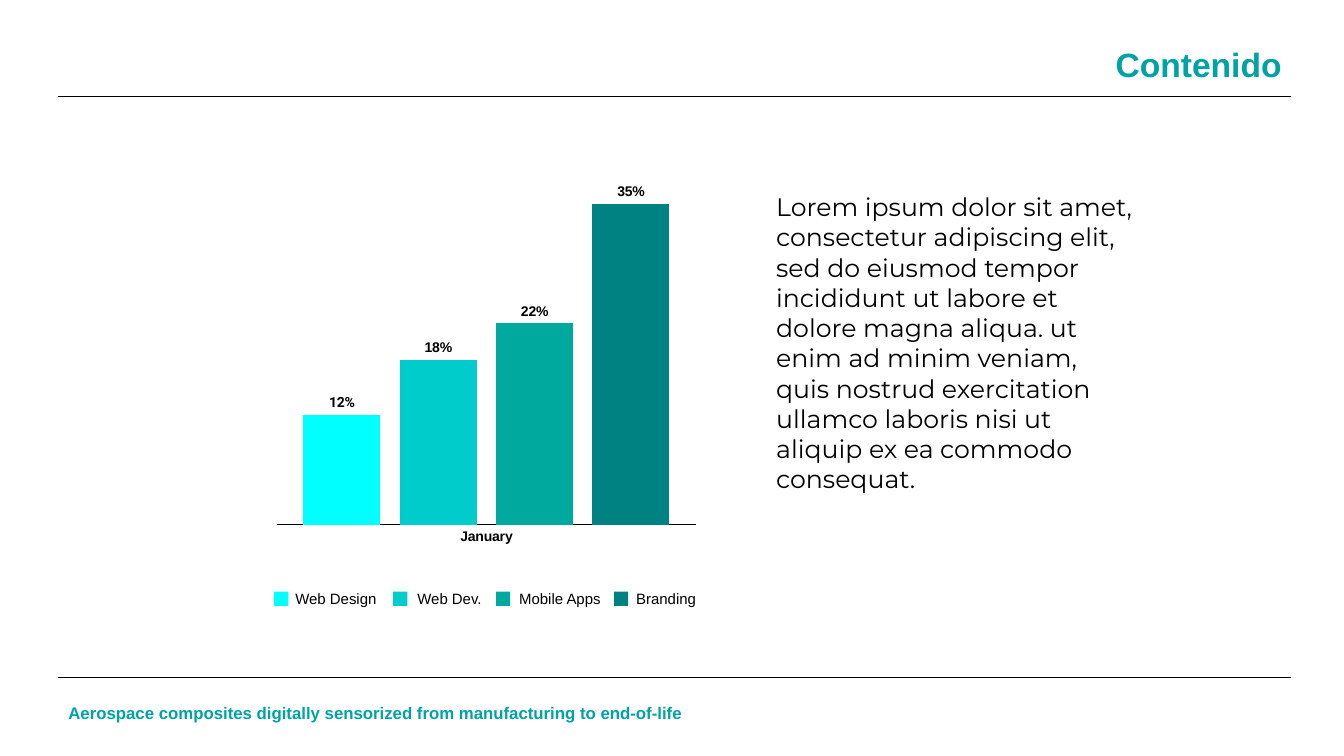
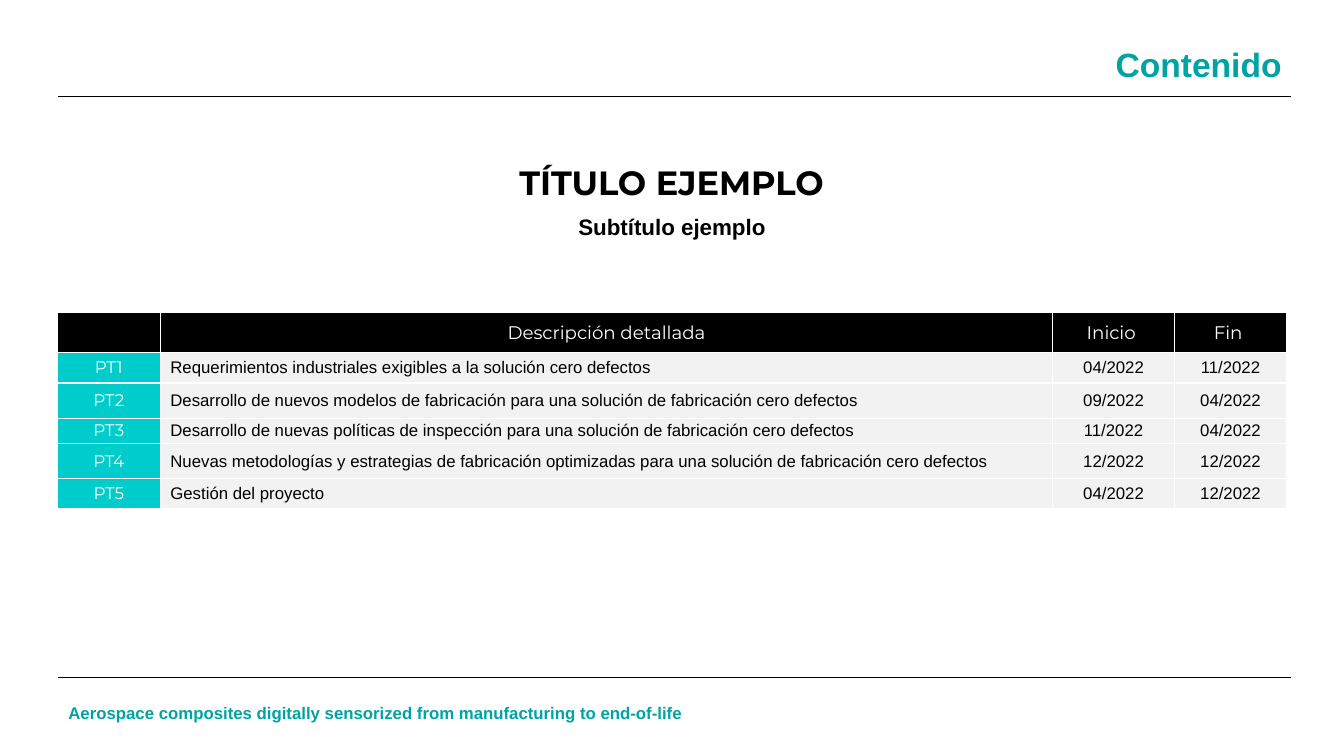
import lxml.etree
import pptx
import pptx.chart.data
import pptx.dml.color
import pptx.enum.chart
import pptx.enum.shapes
import pptx.enum.text
import pptx.oxml.ns
import pptx.util

Inches = pptx.util.Inches
Pt = pptx.util.Pt
ALIGN = pptx.enum.text.PP_ALIGN
ANCHOR = pptx.enum.text.MSO_ANCHOR


class Theme:
    ink = "000000"
    paper = "FFFFFF"
    accent = "00A3A3"
    stage = "00CCCC"
    row = "F2F2F2"
    chart_base = "FFC000"
    sans = "Arial"
    display = "Montserrat"
    chart_font = "Lato"
    label_font = "Roboto"
    heading_size = 24
    body_size = 18
    subtitle_size = 16
    header_size = 13
    small_size = 12
    legend_size = 10.7
    label_size = 10
    chart_size = 8
    rule_width = 0.5
    axis_width = 0.75
    border_width = 1


HEADING = "Contenido"
FOOTER = "Aerospace composites digitally sensorized from manufacturing to end-of-life"
RULE_LEFT, RULE_RIGHT = 0.58, 12.8
RULE_TOPS = (0.96, 6.72)

MONTH = "January"
SERVICES = [
    {"name": "Web Design", "share": 0.12, "color": "00FFFF", "font": Theme.label_font,
     "key_left": 2.72, "name_left": 2.93, "name_width": 0.97},
    {"name": "Web Dev.", "share": 0.18, "color": "00CCCC", "font": Theme.sans,
     "key_left": 3.9, "name_left": 4.14, "name_width": 0.97},
    {"name": "Mobile Apps", "share": 0.22, "color": "00A99D", "font": Theme.sans,
     "key_left": 4.92, "name_left": 5.15, "name_width": 0.97},
    {"name": "Branding", "share": 0.35, "color": "008282", "font": Theme.sans,
     "key_left": 6.09, "name_left": 6.31, "name_width": 0.72},
]
LEGEND_TOP, KEY_TOP, KEY_SIZE = 5.85, 5.87, 0.14
BODY = (
    "Lorem ipsum dolor sit amet, consectetur adipiscing elit, sed do eiusmod tempor "
    "incididunt ut labore et dolore magna aliqua. ut enim ad minim veniam, quis nostrud "
    "exercitation ullamco laboris nisi ut aliquip ex ea commodo consequat."
)

TITLE = "TÍTULO EJEMPLO"
SUBTITLE = "Subtítulo ejemplo"
PLAN = [
    ("", "Descripción detallada", "Inicio ", "Fin "),
    ("PT1", "Requerimientos industriales exigibles a la solución cero defectos",
     "04/2022", "11/2022"),
    ("PT2", "Desarrollo de nuevos modelos de fabricación para una solución de fabricación cero defectos",
     "09/2022", "04/2022"),
    ("PT3", "Desarrollo de nuevas políticas de inspección para una solución de fabricación cero defectos",
     "11/2022", "04/2022"),
    ("PT4", "Nuevas metodologías y estrategias de fabricación optimizadas para una solución de fabricación cero defectos",
     "12/2022", "12/2022"),
    ("PT5", "Gestión del proyecto", "04/2022", "12/2022"),
]
PLAN_WIDTHS = (1.02, 8.85, 1.21, 1.11)
PLAN_HEIGHTS = (0.4, 0.3, 0.35, 0.25, 0.35, 0.3)


def rgb(color):
    return pptx.dml.color.RGBColor.from_string(color)


def style_font(font, size, color, face, bold=False):
    font.size = Pt(size)
    font.color.rgb = rgb(color)
    font.name = face
    font.bold = bold


def write(frame, text, size, color, face, bold=False, align=ALIGN.LEFT):
    paragraph = frame.paragraphs[0]
    paragraph.alignment = align
    run = paragraph.add_run()
    run.text = text
    style_font(run.font, size, color, face, bold)


def add_text(shapes, box, text, size, color, face, bold=False, align=ALIGN.LEFT,
             wrap=True, flush=False):
    frame = shapes.add_textbox(*map(Inches, box)).text_frame
    frame.word_wrap = wrap
    frame.auto_size = pptx.enum.text.MSO_AUTO_SIZE.SHAPE_TO_FIT_TEXT
    if flush:
        frame.margin_left = frame.margin_right = frame.margin_top = frame.margin_bottom = 0
    write(frame, text, size, color, face, bold, align)


def add_content_slide(deck):
    slide = deck.slides.add_slide(deck.slide_layouts[6])
    add_text(slide.shapes, (RULE_LEFT, 6.92, 6.42, 0.3), FOOTER,
             Theme.small_size, Theme.accent, Theme.sans, bold=True)
    for top in RULE_TOPS:
        rule = slide.shapes.add_connector(
            pptx.enum.shapes.MSO_CONNECTOR.STRAIGHT,
            Inches(RULE_LEFT), Inches(top), Inches(RULE_RIGHT), Inches(top))
        rule.line.color.rgb = rgb(Theme.ink)
        rule.line.width = Pt(Theme.rule_width)
        lxml.etree.SubElement(rule._element.spPr, pptx.oxml.ns.qn("a:effectLst"))
    add_text(slide.shapes, (9.23, 0.39, 3.58, 0.5), HEADING,
             Theme.heading_size, Theme.accent, Theme.sans, bold=True, align=ALIGN.RIGHT)
    return slide


def add_share_chart(slide):
    shares = pptx.chart.data.CategoryChartData(number_format="0%")
    shares.categories = [MONTH]
    for service in SERVICES:
        shares.add_series(service["name"], [service["share"]])
    chart = slide.shapes.add_chart(
        pptx.enum.chart.XL_CHART_TYPE.COLUMN_CLUSTERED,
        Inches(2.66), Inches(1.49), Inches(4.33), Inches(3.99), shares).chart
    chart.has_legend = False
    chart.has_title = False
    style_font(chart.font, Theme.chart_size, Theme.chart_base, Theme.chart_font)

    months = chart.category_axis
    months.major_tick_mark = pptx.enum.chart.XL_TICK_MARK.NONE
    months.format.line.color.rgb = rgb(Theme.ink)
    months.format.line.width = Pt(Theme.axis_width)
    style_font(months.tick_labels.font, Theme.label_size, Theme.ink, Theme.sans, True)

    scale = chart.value_axis
    scale.minimum_scale, scale.maximum_scale = 0, 0.4
    scale.has_major_gridlines = False
    scale.visible = False

    columns = chart.plots[0]
    columns.vary_by_categories = False
    columns.gap_width = 69
    columns.overlap = -25
    for series, service in zip(columns.series, SERVICES):
        series.format.fill.solid()
        series.format.fill.fore_color.rgb = rgb(service["color"])
        labels = series.data_labels
        labels.show_value = True
        labels.number_format = "0%"
        labels.number_format_is_linked = False
        labels.position = pptx.enum.chart.XL_LABEL_POSITION.OUTSIDE_END
        style_font(labels.font, Theme.label_size, Theme.ink, service["font"], True)


def add_legend(slide):
    legend = slide.shapes.add_group_shape().shapes
    for service in SERVICES:
        add_text(legend, (service["name_left"], LEGEND_TOP, service["name_width"], 0.18),
                 service["name"], Theme.legend_size, Theme.ink, Theme.sans, flush=True)
        key = legend.add_shape(
            pptx.enum.shapes.MSO_SHAPE.RECTANGLE,
            Inches(service["key_left"]), Inches(KEY_TOP), Inches(KEY_SIZE), Inches(KEY_SIZE))
        key.shadow.inherit = False
        key.fill.solid()
        key.fill.fore_color.rgb = rgb(service["color"])
        key.line.fill.background()


def add_borders(cell):
    qn = pptx.oxml.ns.qn
    properties = cell._tc.get_or_add_tcPr()
    for side in ("lnL", "lnR", "lnT", "lnB"):
        border = lxml.etree.SubElement(properties, qn("a:" + side),
                                       w=str(int(Pt(Theme.border_width))))
        fill = lxml.etree.SubElement(border, qn("a:solidFill"))
        lxml.etree.SubElement(fill, qn("a:srgbClr"), val=Theme.paper)


def plan_style(row, column):
    if row == 0:
        return Theme.ink, Theme.header_size, Theme.paper, Theme.display, ALIGN.CENTER
    if column == 0:
        return Theme.stage, Theme.small_size, Theme.paper, Theme.display, ALIGN.CENTER
    align = ALIGN.JUSTIFY if column == 1 else ALIGN.CENTER
    return Theme.row, Theme.small_size, Theme.ink, Theme.sans, align


def add_plan(slide):
    plan = slide.shapes.add_table(
        len(PLAN), len(PLAN_WIDTHS), Inches(0.57), Inches(3.1),
        Inches(sum(PLAN_WIDTHS)), Inches(sum(PLAN_HEIGHTS))).table
    plan.first_row = False
    plan.horz_banding = False
    for column, width in zip(plan.columns, PLAN_WIDTHS):
        column.width = Inches(width)
    for row, height in zip(plan.rows, PLAN_HEIGHTS):
        row.height = Inches(height)
    for r, entries in enumerate(PLAN):
        for c, entry in enumerate(entries):
            fill, size, color, face, align = plan_style(r, c)
            cell = plan.cell(r, c)
            cell.margin_left = cell.margin_right = Inches(0.1)
            cell.margin_top = cell.margin_bottom = 0
            cell.vertical_anchor = ANCHOR.MIDDLE
            add_borders(cell)
            cell.fill.solid()
            cell.fill.fore_color.rgb = rgb(fill)
            if entry:
                write(cell.text_frame, entry, size, color, face, align=align)


def main():
    deck = pptx.Presentation()
    deck.slide_width, deck.slide_height = Inches(13.33), Inches(7.5)

    services_slide = add_content_slide(deck)
    add_share_chart(services_slide)
    add_legend(services_slide)
    add_text(services_slide.shapes, (7.6, 1.85, 3.77, 3.43), BODY,
             Theme.body_size, Theme.ink, Theme.display)

    plan_slide = add_content_slide(deck)
    add_plan(plan_slide)
    add_text(plan_slide.shapes, (4.92, 1.56, 3.48, 0.5), TITLE, Theme.heading_size,
             Theme.ink, Theme.display, bold=True, align=ALIGN.CENTER, wrap=False)
    add_text(plan_slide.shapes, (5.62, 2.07, 2.09, 0.37), SUBTITLE, Theme.subtitle_size,
             Theme.ink, Theme.sans, bold=True, align=ALIGN.CENTER, wrap=False)

    deck.save("out.pptx")


if __name__ == "__main__":
    main()
